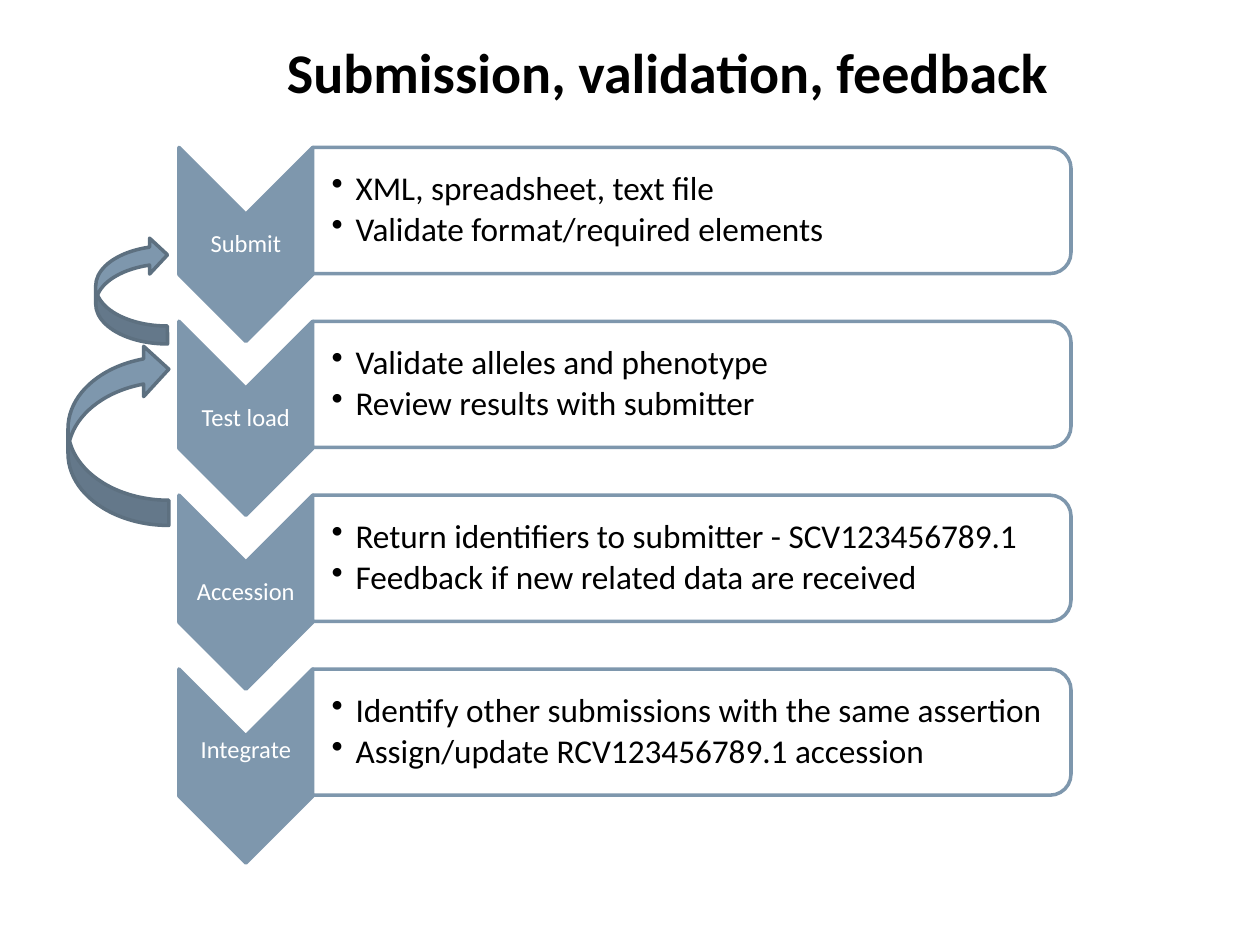
from dataclasses import dataclass

from lxml.etree import SubElement
from pptx import Presentation
from pptx.dml.color import RGBColor
from pptx.enum.shapes import MSO_SHAPE as Preset
from pptx.enum.text import MSO_ANCHOR as Anchor, MSO_AUTO_SIZE as AutoSize, PP_ALIGN as Align
from pptx.oxml.ns import qn
from pptx.util import Inches, Pt


@dataclass(frozen=True)
class Theme:
    font: str = "Calibri"
    accent: RGBColor = RGBColor(0x7E, 0x97, 0xAD)
    outline: RGBColor = RGBColor(0x5D, 0x70, 0x80)
    paper: RGBColor = RGBColor(0xFF, 0xFF, 0xFF)
    ink: RGBColor = RGBColor(0, 0, 0)
    title_size: int = 32
    bullet_size: int = 19
    label_size: int = 14
    line_width: int = 2


@dataclass(frozen=True)
class Box:
    left: float
    top: float
    width: float
    height: float

    def share(self, left, top, width, height):
        """Return a box given as shares of this one."""
        return Box(self.left + left * self.width, self.top + top * self.height,
                   width * self.width, height * self.height)

    def turned(self):
        """Swap width and height about the centre."""
        shift = (self.width - self.height) / 2
        return Box(self.left + shift, self.top - shift, self.height, self.width)

    def lengths(self):
        return [Inches(v) for v in (self.left, self.top, self.width, self.height)]


THEME = Theme()
SLIDE = Box(0, 0, 10, 7.5)
ROW_PITCH = 1.38
INSET = 0.01
STEPS = [
    ("Submit", ["XML, spreadsheet, text file", "Validate format/required elements"]),
    ("Test load", ["Validate alleles and phenotype", "Review results with submitter"]),
    ("Accession", ["Return identifiers to submitter - SCV123456789.1",
                   "Feedback if new related data are received"]),
    ("Integrate", ["Identify other submissions with the same assertion",
                   "Assign/update RCV123456789.1 accession"]),
]


def style_font(paragraph, size, color, bold=False):
    font = paragraph.font
    font.name, font.size, font.bold = THEME.font, Pt(size), bold
    font.color.rgb = color


def add_turned_shape(slide, preset, box, angle, fill, line):
    """Place a quarter-turned shape so that it covers the box."""
    shape = slide.shapes.add_shape(preset, *box.turned().lengths())
    shape.rotation = angle
    shape.shadow.inherit = False
    shape.fill.solid()
    shape.fill.fore_color.rgb = fill
    shape.line.color.rgb = line
    shape.line.width = Pt(THEME.line_width)


def add_text_frame(slide, box, left_inset=INSET):
    frame = slide.shapes.add_textbox(*box.lengths()).text_frame
    frame.word_wrap = True
    frame.vertical_anchor = Anchor.MIDDLE
    frame.margin_left = Inches(left_inset)
    frame.margin_right = frame.margin_top = frame.margin_bottom = Inches(INSET)
    return frame


def add_bullet(paragraph, text):
    paragraph.text = text
    paragraph.level = 1
    paragraph.line_spacing = 0.9
    paragraph.space_after = Pt(0.15 * THEME.bullet_size)
    properties = paragraph._p.get_or_add_pPr()
    properties.set("marL", str(Inches(0.19)))
    properties.set("indent", str(-Inches(0.19)))
    SubElement(properties, qn("a:buChar"), char="•")
    style_font(paragraph, THEME.bullet_size, THEME.ink)


def add_title(slide, box):
    title = slide.shapes.title
    title.left, title.top, title.width, title.height = box.lengths()
    frame = title.text_frame
    frame.text = "Submission, validation, feedback"
    frame.auto_size = AutoSize.NONE
    paragraph = frame.paragraphs[0]
    paragraph.alignment = Align.CENTER
    style_font(paragraph, THEME.title_size, THEME.ink, bold=True)


def add_step(slide, box, label, bullets, label_top):
    chevron = box.share(0, 0, 0.15, 1)
    panel = box.share(0.15, 0, 0.85, 0.65)

    # Chevron and its label
    add_turned_shape(slide, Preset.CHEVRON, chevron, 90, THEME.accent, THEME.accent)
    frame = add_text_frame(slide, chevron.share(0, label_top, 1, 0.3))
    paragraph = frame.paragraphs[0]
    paragraph.text = label
    paragraph.alignment = Align.CENTER
    paragraph.line_spacing = 0.9
    style_font(paragraph, THEME.label_size, THEME.paper)

    # Rounded panel and its bullets
    add_turned_shape(slide, Preset.ROUND_2_SAME_RECTANGLE, panel, 90,
                     THEME.paper, THEME.accent)
    frame = add_text_frame(slide, panel.share(0, 0.05, 0.99, 0.9), left_inset=0.15)
    for index, text in enumerate(bullets):
        add_bullet(frame.add_paragraph() if index else frame.paragraphs[0], text)


def add_steps(slide, box):
    for row, (label, bullets) in enumerate(STEPS):
        # The last label sits half a line higher
        label_top = 0.27 if row == len(STEPS) - 1 else 0.35
        step = Box(box.left, box.top + row * ROW_PITCH, box.width, box.height)
        add_step(slide, step, label, bullets, label_top)


def add_feedback_arrows(slide, boxes):
    for box in boxes:
        add_turned_shape(slide, Preset.CURVED_DOWN_ARROW, box, 270,
                         THEME.accent, THEME.outline)


def main():
    presentation = Presentation()
    presentation.slide_width = Inches(SLIDE.width)
    presentation.slide_height = Inches(SLIDE.height)
    slide = presentation.slides.add_slide(presentation.slide_layouts[5])

    # Shares of the slide, as round percentages where they fit
    add_title(slide, SLIDE.share(0.09, 0.03, 0.88, 0.09))
    add_steps(slide, Box(1.42, 1.17, 7.08, 1.54))
    add_feedback_arrows(slide, [Box(0.54, 2.73, 0.8, 1.44),
                                Box(0.76, 1.88, 0.57, 0.85)])
    presentation.save("out.pptx")


if __name__ == "__main__":
    main()
